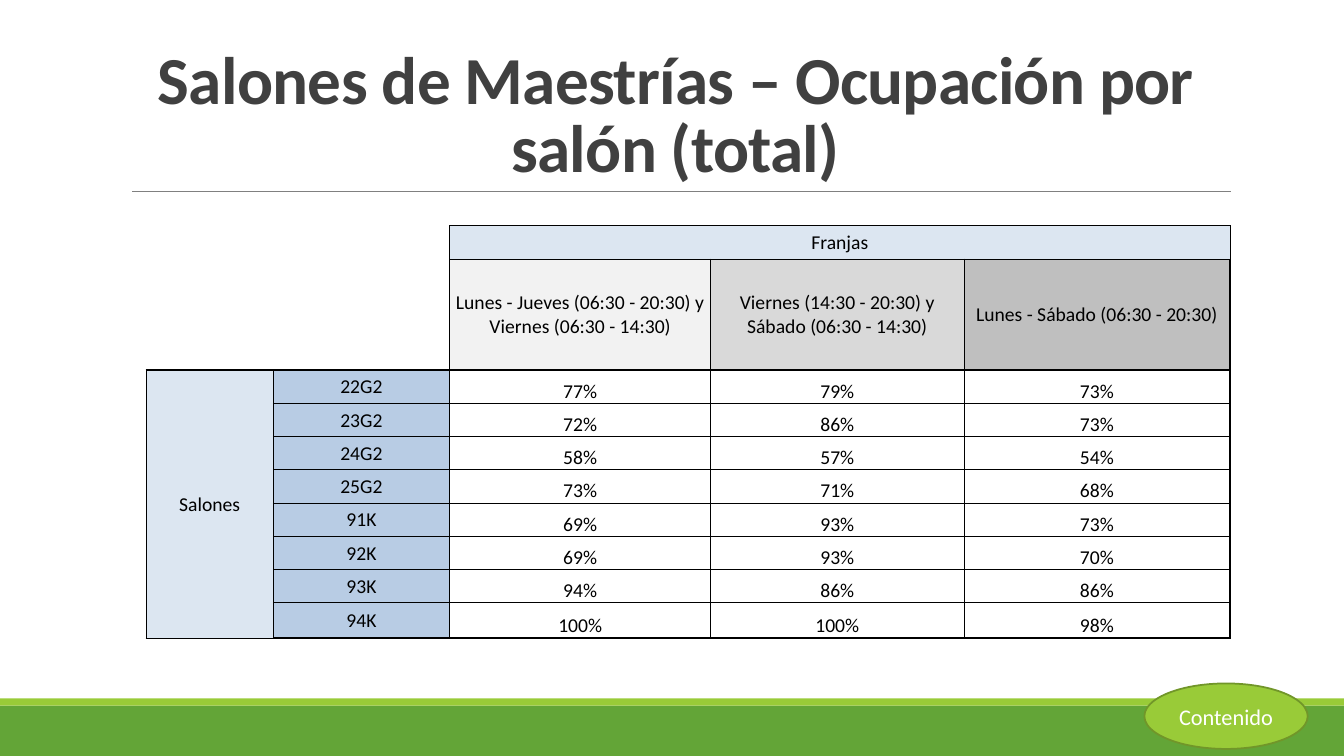
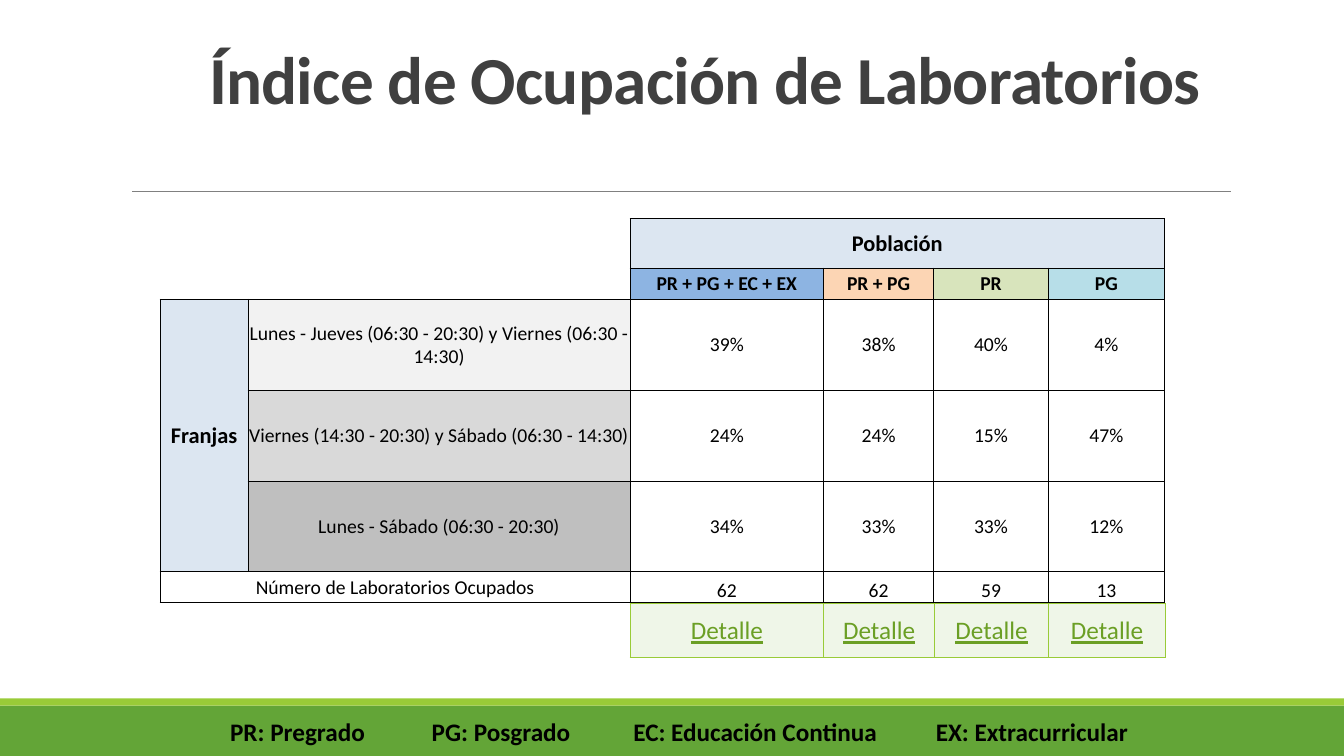
"""Build two slides on classroom and laboratory occupancy."""
from pptx import Presentation
from pptx.dml.color import RGBColor
from pptx.enum import shapes, text
from pptx.oxml.ns import qn
from pptx.util import Inches, Pt
from lxml import etree

GREEN, LIME = RGBColor(0x63, 0xA5, 0x37), RGBColor(0x99, 0xCB, 0x38)
OLIVE, LINK = RGBColor(0x71, 0x96, 0x29), RGBColor(0x6B, 0x9F, 0x25)
MINT, WHITE = RGBColor(0xEF, 0xF6, 0xE8), RGBColor(0xFF, 0xFF, 0xFF)
BLACK, DARK = RGBColor(0, 0, 0), RGBColor(0x40, 0x40, 0x40)
GRAY = RGBColor(0x80, 0x80, 0x80)
PALE, BLUE = RGBColor(0xDC, 0xE6, 0xF1), RGBColor(0xB8, 0xCC, 0xE4)
SLOT_FILLS = [RGBColor(v, v, v) for v in (0xF2, 0xD9, 0xBF)]
GROUP_FILLS = [RGBColor(0x8D, 0xB4, 0xE2), RGBColor(0xFC, 0xD5, 0xB4),
               RGBColor(0xD8, 0xE4, 0xBC), RGBColor(0xB7, 0xDE, 0xE8)]
FONT = "Calibri"
MIDDLE, BOTTOM = text.MSO_ANCHOR.MIDDLE, text.MSO_ANCHOR.BOTTOM

SLOTS = ["Lunes - Jueves (06:30 - 20:30) y Viernes (06:30 - 14:30)",
         "Viernes (14:30 - 20:30) y Sábado (06:30 - 14:30)",
         "Lunes - Sábado (06:30 - 20:30)"]
ROOMS = [("22G2", "77%", "79%", "73%"), ("23G2", "72%", "86%", "73%"),
         ("24G2", "58%", "57%", "54%"), ("25G2", "73%", "71%", "68%"),
         ("91K", "69%", "93%", "73%"), ("92K", "69%", "93%", "70%"),
         ("93K", "94%", "86%", "86%"), ("94K", "100%", "100%", "98%")]
GROUPS = ["PR + PG + EC + EX", "PR + PG", "PR", "PG"]
LAB_RATES = [("39%", "38%", "40%", "4%"), ("24%", "24%", "15%", "47%"),
             ("34%", "33%", "33%", "12%")]
LAB_COUNTS = ["62", "62", "59", "13"]
LEGEND = ("PR: Pregrado\tPG: Posgrado\tEC: Educación Continua"
          "\tEX: Extracurricular")


def box(*lengths):
    return [Inches(v) for v in lengths]


def write(tf, content, color, size, bold=False, underline=False):
    p = tf.paragraphs[0]
    p.alignment = text.PP_ALIGN.CENTER
    r = p.add_run()
    r.text = content
    r.font.color.rgb = color
    style = dict(name=FONT, size=Pt(size), bold=bold, underline=underline)
    for key, value in style.items():
        setattr(r.font, key, value)
    return p, r


def add_solid(s, kind, at, fill, outline=None):
    sp = s.shapes.add_shape(kind, *box(*at))
    sp.shadow.inherit = False
    sp.fill.solid()
    sp.fill.fore_color.rgb = fill
    if outline is None:
        sp.line.fill.background()
    else:
        sp.line.color.rgb, sp.line.width = outline, Pt(1.25)
    return sp


def decorate_layout(layout, s):
    """Move the bands and title rule to the layout."""
    rect = shapes.MSO_SHAPE.RECTANGLE
    rule = s.shapes.add_connector(shapes.MSO_CONNECTOR.STRAIGHT,
                                  *box(1.31, 1.9, 12.21, 1.9))
    rule.line.color.rgb, rule.line.width = GRAY, Pt(0.5)
    etree.SubElement(rule.element.spPr, qn("a:effectLst"))
    parts = [add_solid(s, rect, (0, 7, 13.33, 0.5), GREEN),
             add_solid(s, rect, (0, 6.93, 13.33, 0.07), LIME), rule]
    for i, sp in enumerate(parts):
        sp.element.xpath(".//p:cNvPr")[0].set("id", str(101 + i))
        layout.shapes.element.insert(2 + i, sp.element)


def set_title(s, content, at):
    title = s.shapes.title
    for key, value in zip(("left", "top", "width", "height"), box(*at)):
        setattr(title, key, value)
    tf = title.text_frame
    tf.auto_size = text.MSO_AUTO_SIZE.NONE
    tf.vertical_anchor = BOTTOM
    p, r = write(tf, content, DARK, 48, bold=True)
    p.line_spacing = 0.85
    r.font._element.set("spc", "-50")


def set_borders(cell, weights, color):
    tc_pr = cell._tc.get_or_add_tcPr()
    for i, (side, weight) in enumerate(zip("LRTB", weights)):
        ln = etree.Element(qn(f"a:ln{side}"), w=str(Pt(weight)))
        if weight:
            fill = etree.SubElement(ln, qn("a:solidFill"))
            etree.SubElement(fill, qn("a:srgbClr"), val=str(color))
        else:
            etree.SubElement(ln, qn("a:noFill"))
        tc_pr.insert(i, ln)


def add_grid(s, at, cols, heights, rows, styles, spans=(), heavy_rows=(),
             heavy_cols=(), border=BLACK, corner=0):
    """Add a table whose top-left corner x corner cells have no outline."""
    frame = s.shapes.add_table(len(rows), len(cols),
                               *box(*at, sum(cols), sum(heights)))
    table = frame.table
    table.first_row = table.horz_banding = False
    for line, size in zip(table.columns, cols):
        line.width = Inches(size)
    for line, size in zip(table.rows, heights):
        line.height = Inches(size)
    for first, last in spans:
        table.cell(*first).merge(table.cell(*last))
    for r, row in enumerate(rows):
        for c, content in enumerate(row):
            cell = table.cell(r, c)
            style = dict(fill=WHITE, anchor=MIDDLE, color=BLACK, size=14)
            style.update(styles.get((r, c), {}))
            layout = dict(vertical_anchor=style.pop("anchor"),
                          margin_left=Inches(0.01), margin_right=Inches(0.01),
                          margin_top=Inches(0.01), margin_bottom=0)
            for key, value in layout.items():
                setattr(cell, key, value)
            cell.fill.solid()
            cell.fill.fore_color.rgb = style.pop("fill")
            write(cell.text_frame, content, **style)
            weights = [1 if n in heavy else 0.5 for n, heavy in
                       ((c, heavy_cols), (c + 1, heavy_cols),
                        (r, heavy_rows), (r + 1, heavy_rows))]
            if r < corner and c < corner:
                shown = (False, c + 1 == corner, False, r + 1 == corner)
                weights = [w if on else 0 for w, on in zip(weights, shown)]
            set_borders(cell, weights, border)


def build_rooms(s):
    set_title(s, "Salones de Maestrías – Ocupación por salón (total)",
              (1.2, 0.31, 11, 1.59))
    button = add_solid(s, shapes.MSO_SHAPE.OVAL, (11.35, 6.78, 1.62, 0.65),
                       LIME, OLIVE)
    button.text_frame.word_wrap = False
    button.text_frame.vertical_anchor = MIDDLE
    write(button.text_frame, "Contenido", WHITE, 16)

    rows = [["", "", "Franjas", "", ""], ["", "", *SLOTS]]
    rows += [["" if i else "Salones", *room] for i, room in enumerate(ROOMS)]
    styles = {(0, 2): dict(fill=PALE), (2, 0): dict(fill=PALE)}
    for i, fill in enumerate(SLOT_FILLS):
        styles[1, 2 + i] = dict(fill=fill)
    for r in range(2, len(rows)):
        styles[r, 1] = dict(fill=BLUE)
        for c in range(2, 5):
            styles[r, c] = dict(anchor=BOTTOM)
    add_grid(s, (1.45, 2.24), [1.26, 1.75, 2.59, 2.51, 2.64],
             [0.33, 1.1] + [0.33] * 7 + [0.35], rows, styles,
             spans=[((0, 2), (0, 4)), ((2, 0), (9, 0))],
             heavy_rows=(0, 2, 10), heavy_cols=(0, 2, 5), corner=2)


def build_labs(s):
    set_title(s, "Índice de Ocupación de Laboratorios", (1.24, 0.22, 11.5, 1))
    detail = dict(fill=MINT, color=LINK, size=18, underline=True)
    add_grid(s, (6.25, 5.99), [1.92, 1.1, 1.13, 1.16], [0.53],
             [["Detalle"] * 4], {(0, c): detail for c in range(4)},
             heavy_rows=(0, 1), heavy_cols=range(5), border=LIME)

    legend = s.shapes.add_textbox(*box(2.12, 7.06, 9.23, 0.4))
    legend.text_frame.word_wrap = True
    legend.text_frame.auto_size = text.MSO_AUTO_SIZE.SHAPE_TO_FIT_TEXT
    p, _ = write(legend.text_frame, LEGEND, BLACK, 18, bold=True)
    p._p.get_or_add_pPr().set("defTabSz", str(Inches(1)))

    rows = [["", "", "Población", "", "", ""], ["", "", *GROUPS]]
    rows += [["" if i else "Franjas", slot, *rates]
             for i, (slot, rates) in enumerate(zip(SLOTS, LAB_RATES))]
    rows.append(["Número de Laboratorios Ocupados", "", *LAB_COUNTS])
    heading = dict(fill=PALE, size=16, bold=True)
    styles = {(0, 2): heading, (2, 0): heading}
    for i, fill in enumerate(GROUP_FILLS):
        styles[1, 2 + i] = dict(fill=fill, bold=True)
        styles[5, 2 + i] = dict(anchor=BOTTOM)
    for i, fill in enumerate(SLOT_FILLS):
        styles[2 + i, 1] = dict(fill=fill)
    add_grid(s, (1.59, 2.17), [0.87, 3.79, 1.92, 1.09, 1.14, 1.15],
             [0.49, 0.31, 0.9, 0.9, 0.9, 0.31], rows, styles,
             spans=[((0, 2), (0, 5)), ((2, 0), (4, 0)), ((5, 0), (5, 1))],
             heavy_rows=(0, 1, 2, 5, 6), heavy_cols=(0, 2, 6), corner=2)


def main():
    prs = Presentation()
    prs.slide_width, prs.slide_height = box(13.33, 7.5)
    layout = prs.slide_layouts[5]
    rooms, labs = [prs.slides.add_slide(layout) for _ in range(2)]
    decorate_layout(layout, rooms)
    build_rooms(rooms)
    build_labs(labs)
    prs.save("out.pptx")


if __name__ == "__main__":
    main()
